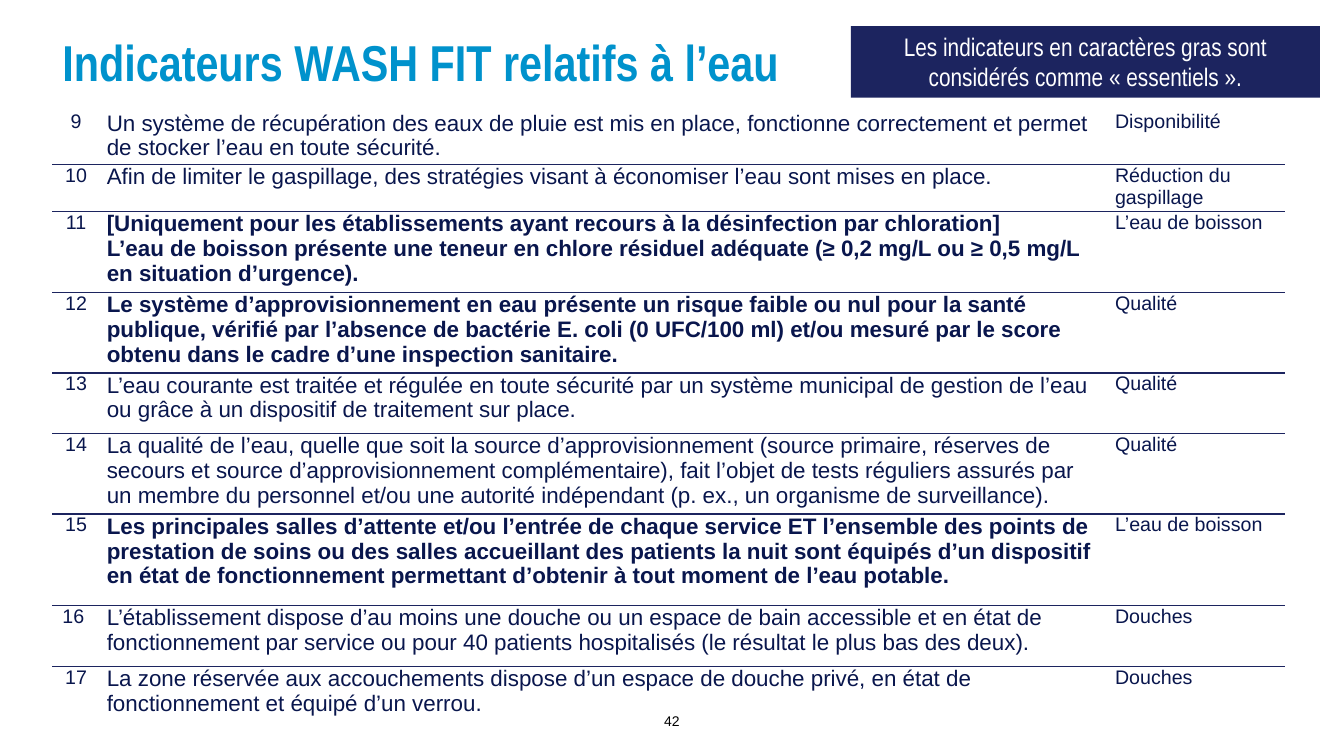
from lxml.etree import SubElement
from pptx import Presentation
from pptx.dml.color import RGBColor
from pptx.enum.shapes import MSO_SHAPE
from pptx.enum.text import MSO_ANCHOR, PP_ALIGN
from pptx.oxml.ns import qn
from pptx.util import Inches, Pt

NAVY = "1C245F"
INK = "09164D"

COLUMN_WIDTHS = [0.47, 10, 1.76]

INDICATORS = [
    (0.53, "9", "Un système de récupération des eaux de pluie est mis en place, fonctionne correctement et permet de stocker l’eau en toute sécurité.", "Disponibilité", False),
    (0.47, "10", "Afin de limiter le gaspillage, des stratégies visant à économiser l’eau sont mises en place.", "Réduction du gaspillage", False),
    (0.8, "11", "[Uniquement pour les établissements ayant recours à la désinfection par chloration]\nL’eau de boisson présente une teneur en chlore résiduel adéquate (≥ 0,2 mg/L ou ≥ 0,5 mg/L en situation d’urgence).", "L’eau de boisson", True),
    (0.8, "12", "Le système d’approvisionnement en eau présente un risque faible ou nul pour la santé publique, vérifié par l’absence de bactérie E. coli (0 UFC/100 ml) et/ou mesuré par le score obtenu dans le cadre d’une inspection sanitaire.", "Qualité", True),
    (0.6, "13", "L’eau courante est traitée et régulée en toute sécurité par un système municipal de gestion de l’eau ou grâce à un dispositif de traitement sur place.", "Qualité", False),
    (0.8, "14", "La qualité de l’eau, quelle que soit la source d’approvisionnement (source primaire, réserves de secours et source d’approvisionnement complémentaire), fait l’objet de tests réguliers assurés par un membre du personnel et/ou une autorité indépendant (p. ex., un organisme de surveillance).", "Qualité", False),
    (0.91, "15", "Les principales salles d’attente et/ou l’entrée de chaque service ET l’ensemble des points de prestation de soins ou des salles accueillant des patients la nuit sont équipés d’un dispositif en état de fonctionnement permettant d’obtenir à tout moment de l’eau potable.", "L’eau de boisson", True),
    (0.6, "16 ", "L’établissement dispose d’au moins une douche ou un espace de bain accessible et en état de fonctionnement par service ou pour 40 patients hospitalisés (le résultat le plus bas des deux).", "Douches", False),
    (0.6, "17", "La zone réservée aux accouchements dispose d’un espace de douche privé, en état de fonctionnement et équipé d’un verrou.", "Douches", False),
]


def color(value):
    return RGBColor.from_string(value)


def write(frame, text, ink, align=PP_ALIGN.LEFT, spacing=None, **font):
    frame.word_wrap = True
    for index, line in enumerate(text.split("\n")):
        para = frame.add_paragraph() if index else frame.paragraphs[0]
        para.alignment = align
        if spacing:
            para.line_spacing = spacing
        span = para.add_run()
        span.text = line
        span.font.color.rgb = color(ink)
        for name, value in font.items():
            setattr(span.font, name, value)


def add_label(page, place, text, ink, anchor=MSO_ANCHOR.TOP, **style):
    box = page.shapes.add_textbox(*map(Inches, place))
    box.text_frame.vertical_anchor = anchor
    write(box.text_frame, text, ink, **style)


def add_banner(page, place, text):
    banner = page.shapes.add_shape(MSO_SHAPE.RECTANGLE, *map(Inches, place))
    banner.shadow.inherit = False
    banner.fill.solid()
    banner.fill.fore_color.rgb = color(NAVY)
    banner.line.fill.background()
    banner.text_frame.vertical_anchor = MSO_ANCHOR.TOP
    write(banner.text_frame, text, "FFFFFF", PP_ALIGN.CENTER,
          size=Pt(18.1), name="Arial Narrow")


def set_borders(cell, top, bottom):
    properties = cell._tc.get_or_add_tcPr()
    sides = {"lnL": False, "lnR": False, "lnT": top, "lnB": bottom}
    for index, (side, visible) in enumerate(sides.items()):
        line = SubElement(properties, qn(f"a:{side}"), w=str(Pt(1)))
        if visible:
            fill = SubElement(line, qn("a:solidFill"))
            SubElement(fill, qn("a:srgbClr"), val=NAVY)
        else:
            SubElement(line, qn("a:noFill"))
        properties.insert(index, line)


def add_indicator_table(page, left, top):
    height = sum(indicator[0] for indicator in INDICATORS)
    place = map(Inches, (left, top, sum(COLUMN_WIDTHS), height))
    table = page.shapes.add_table(len(INDICATORS), len(COLUMN_WIDTHS), *place).table
    table.first_row = table.horz_banding = False
    for column, width in zip(table.columns, COLUMN_WIDTHS):
        column.width = Inches(width)
    for index, (row_height, number, wording, theme, essential) in enumerate(INDICATORS):
        row = table.rows[index]
        row.height = Inches(row_height)
        contents = [
            (number, PP_ALIGN.CENTER, 14, False),
            (wording, PP_ALIGN.LEFT, 16, essential),
            (theme, PP_ALIGN.LEFT, 14, False),
        ]
        for cell, (text, align, size, bold) in zip(row.cells, contents):
            cell.margin_left = cell.margin_right = Inches(0.07)
            cell.margin_top = cell.margin_bottom = 0
            cell.fill.background()
            set_borders(cell, index > 0, index < len(INDICATORS) - 1)
            write(cell.text_frame, text, INK, align,
                  size=Pt(size), bold=bold, name="Arial")


def main():
    deck = Presentation()
    deck.slide_width, deck.slide_height = Inches(13.33), Inches(7.5)
    page = deck.slides.add_slide(deck.slide_layouts[6])
    add_indicator_table(page, 0.52, 1.1)
    add_label(page, (0.52, 0.33, 8.92, 0.79), "Indicateurs WASH FIT relatifs à l’eau", "0092CC",
              spacing=0.9, size=Pt(36), bold=True, name="Arial Narrow")
    add_label(page, (6.41, 6.95, 0.51, 0.4), "42", "000000", MSO_ANCHOR.MIDDLE,
              align=PP_ALIGN.CENTER, size=Pt(10), name="Arial")
    add_banner(page, (8.44, 0.26, 4.65, 0.71),
               "Les indicateurs en caractères gras sont considérés comme « essentiels ».")
    deck.save("out.pptx")


if __name__ == "__main__":
    main()
